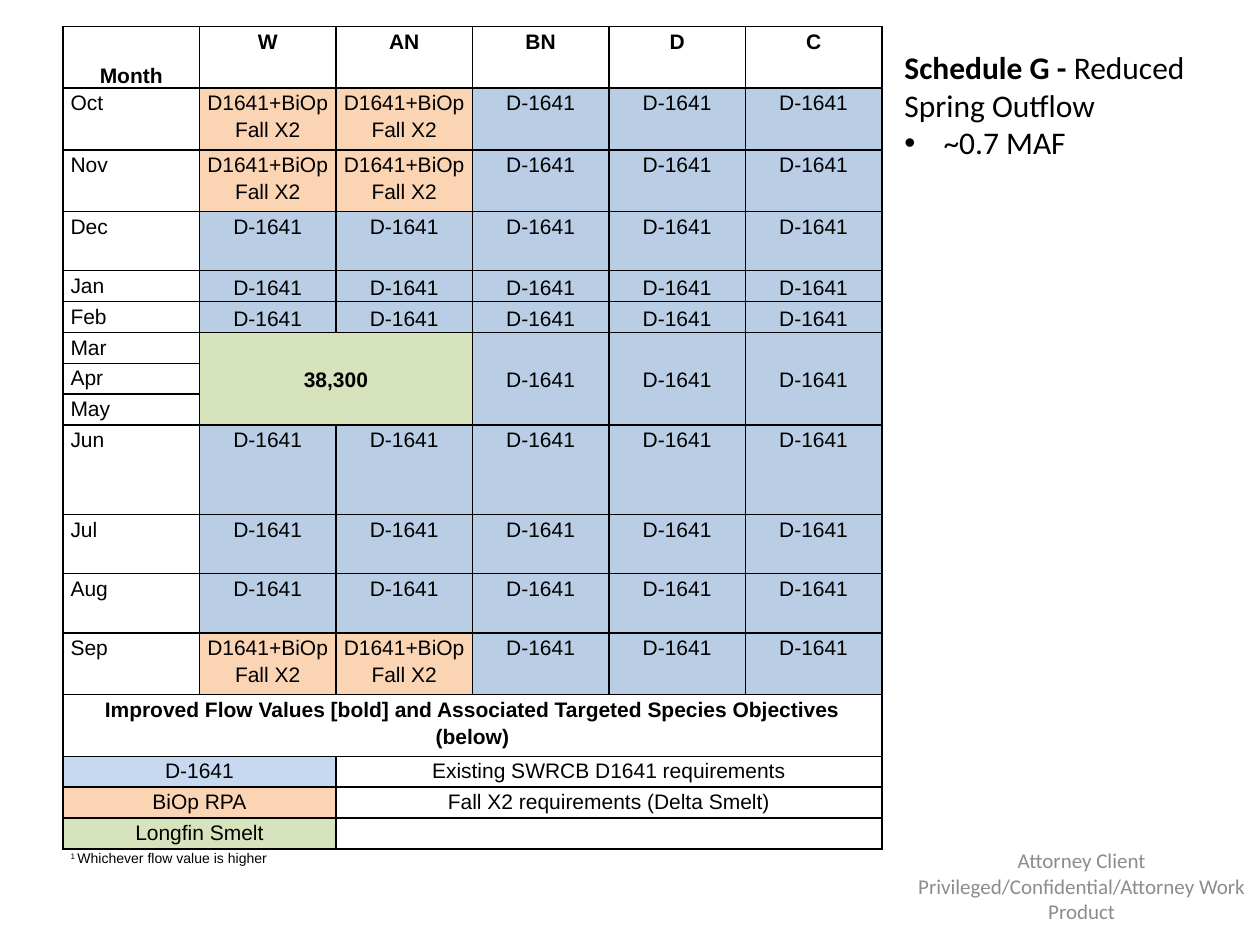
from lxml import etree
from pptx import Presentation
from pptx.dml.color import RGBColor
from pptx.enum.text import MSO_ANCHOR as Anchor, MSO_AUTO_SIZE as AutoSize, PP_ALIGN as Align
from pptx.oxml.ns import qn
from pptx.util import Inches, Pt

BLUE, ORANGE, GREEN, LEGEND_BLUE = "B9CDE5", "FBD4B4", "D6E3BC", "C6D9F1"
BASE, FALL = "D-1641", "D1641+BiOp Fall X2"
FILLS = {BASE: BLUE, FALL: ORANGE}

LINE = 0.245  # height of a row with one line of text
YEAR_TYPES = ["W", "AN", "BN", "D", "C"]
MONTH_HEIGHTS = {
    "Oct": 2 * LINE, "Nov": 2 * LINE, "Dec": 0.47, "Jan": LINE, "Feb": LINE,
    "Mar": LINE, "Apr": LINE, "May": LINE, "Jun": 0.71, "Jul": 0.47,
    "Aug": 0.47, "Sep": 2 * LINE,
}
FALL_MONTHS = {"Oct", "Nov", "Sep"}
SPRING_MONTHS = {"Mar", "Apr", "May"}
MIDDLE_MONTHS = {"Jan", "Feb"}
HEADING = "Improved Flow Values [bold] and Associated Targeted Species Objectives (below)"
LEGEND = [
    (BASE, LEGEND_BLUE, "Existing SWRCB D1641 requirements"),
    ("BiOp RPA", ORANGE, "Fall X2 requirements (Delta Smelt)"),
    ("Longfin Smelt", GREEN, ""),
]


def color(value):
    return RGBColor.from_string(value)


def format_span(span, size, font="Arial", ink="000000", bold=False):
    span.font.size = Pt(size)
    span.font.name = font
    span.font.bold = bold
    span.font.color.rgb = color(ink)


def set_borders(cell, black_sides):
    """Draw black lines on the named sides (of L, R, T, B) and none elsewhere."""
    props = cell._tc.get_or_add_tcPr()
    for index, side in enumerate("LRTB"):
        line = etree.Element(qn(f"a:ln{side}"), w=str(Pt(1)))
        if side in black_sides:
            fill = etree.SubElement(line, qn("a:solidFill"))
            etree.SubElement(fill, qn("a:srgbClr"), val="000000")
        else:
            etree.SubElement(line, qn("a:noFill"))
        props.insert(index, line)


def prepare_cell(cell, size=12, black_sides="LRTB"):
    cell.margin_left = cell.margin_right = Inches(0.06)
    cell.margin_top = cell.margin_bottom = 0
    cell.fill.background()
    set_borders(cell, black_sides)
    para = cell.text_frame.paragraphs[0]
    para.line_spacing = 1.15
    etree.SubElement(para._p, qn("a:endParaRPr"), sz=str(size * 100))


def write_cell(cell, text, fill=None, bold=False, align=Align.CENTER, anchor=Anchor.TOP):
    cell.vertical_anchor = anchor
    para = cell.text_frame.paragraphs[0]
    para.alignment = align
    if text:
        para.text = text
        format_span(para.runs[0], 12, bold=bold)
    if fill:
        cell.fill.solid()
        cell.fill.fore_color.rgb = color(fill)


def write_months(table):
    for row, month in enumerate(MONTH_HEIGHTS, start=1):
        write_cell(table.cell(row, 0), month, align=Align.LEFT)
        if month in SPRING_MONTHS:
            continue
        anchor = Anchor.MIDDLE if month in MIDDLE_MONTHS else Anchor.TOP
        for column in range(1, 6):
            text = FALL if month in FALL_MONTHS and column < 3 else BASE
            write_cell(table.cell(row, column), text, FILLS[text], anchor=anchor)


def write_spring(table, first, last):
    target = table.cell(first, 1)
    target.merge(table.cell(last, 2))
    write_cell(target, "38,300", GREEN, bold=True, anchor=Anchor.MIDDLE)
    for column in range(3, 6):
        cell = table.cell(first, column)
        cell.merge(table.cell(last, column))
        write_cell(cell, BASE, BLUE, anchor=Anchor.MIDDLE)


def write_legend(table, first):
    heading = table.cell(first, 0)
    heading.merge(table.cell(first, 5))
    write_cell(heading, HEADING, bold=True)
    for row, (name, fill, meaning) in enumerate(LEGEND, start=first + 1):
        key, note = table.cell(row, 0), table.cell(row, 2)
        key.merge(table.cell(row, 1))
        note.merge(table.cell(row, 5))
        write_cell(key, name, fill)
        write_cell(note, meaning)


def write_footnote(table, row):
    cell = table.cell(row, 0)
    cell.merge(table.cell(row, 5))
    para = cell.text_frame.paragraphs[0]
    for text in ("1 ", "Whichever flow value is higher"):
        span = para.add_run()
        span.text = text
        format_span(span, 8)
    para.runs[0].font._element.set("baseline", "30000")


def add_schedule_table(page, left, top, width):
    months = list(MONTH_HEIGHTS)
    heights = [2 * LINE, *MONTH_HEIGHTS.values(), 2 * LINE, *[LINE] * len(LEGEND), 0.17]
    frame = page.shapes.add_table(len(heights), 6, left, top, width, Inches(sum(heights)))
    table = frame.table
    table.first_row = table.horz_banding = False
    for column in table.columns:
        column.width = width // 6
    for row, height in zip(table.rows, heights):
        row.height = Inches(height)

    last = len(heights) - 1
    for row in range(last):
        for column in range(6):
            prepare_cell(table.cell(row, column))
    for column in range(6):
        prepare_cell(table.cell(last, column), size=8, black_sides="T")

    write_cell(table.cell(0, 0), "Month", bold=True, anchor=Anchor.BOTTOM)
    for column, name in enumerate(YEAR_TYPES, start=1):
        write_cell(table.cell(0, column), name, bold=True)
    write_months(table)
    write_spring(table, months.index("Mar") + 1, months.index("May") + 1)
    write_legend(table, len(months) + 1)
    write_footnote(table, last)


def add_text_box(page, left, top, width, height):
    text_frame = page.shapes.add_textbox(left, top, width, height).text_frame
    text_frame.word_wrap = True
    return text_frame


def add_summary(page, left, top, width, height):
    text_frame = add_text_box(page, left, top, width, height)
    text_frame.auto_size = AutoSize.SHAPE_TO_FIT_TEXT
    title, point = text_frame.paragraphs[0], text_frame.add_paragraph()
    for text, bold in (("Schedule G - ", True), ("Reduced Spring Outflow", False)):
        span = title.add_run()
        span.text = text
        format_span(span, 18, "Calibri", bold=bold)
    point.text = "~0.7 MAF"
    format_span(point.runs[0], 18, "Calibri")
    props = point._p.get_or_add_pPr()
    props.set("marL", str(Inches(0.31)))
    props.set("indent", str(-Inches(0.31)))
    etree.SubElement(props, qn("a:buFont"), typeface="Arial")
    etree.SubElement(props, qn("a:buChar"), char="•")


def add_footer(page, left, top, width, height):
    text_frame = add_text_box(page, left, top, width, height)
    text_frame.vertical_anchor = Anchor.MIDDLE
    para = text_frame.paragraphs[0]
    para.text = "Attorney Client Privileged/Confidential/Attorney Work Product"
    para.alignment = Align.CENTER
    format_span(para.runs[0], 12, "Calibri", "8C8C8C")


def main():
    deck = Presentation()
    deck.slide_width, deck.slide_height = Inches(10), Inches(7.5)
    page = deck.slides.add_slide(deck.slide_layouts[6])
    add_schedule_table(page, Inches(0.5), Inches(0.21), Inches(6.5))
    add_footer(page, Inches(7), Inches(6.83), Inches(3.17), Inches(0.4))
    add_summary(page, Inches(7.08), Inches(0.33), Inches(2.75), Inches(1.01))
    deck.save("out.pptx")


if __name__ == "__main__":
    main()
